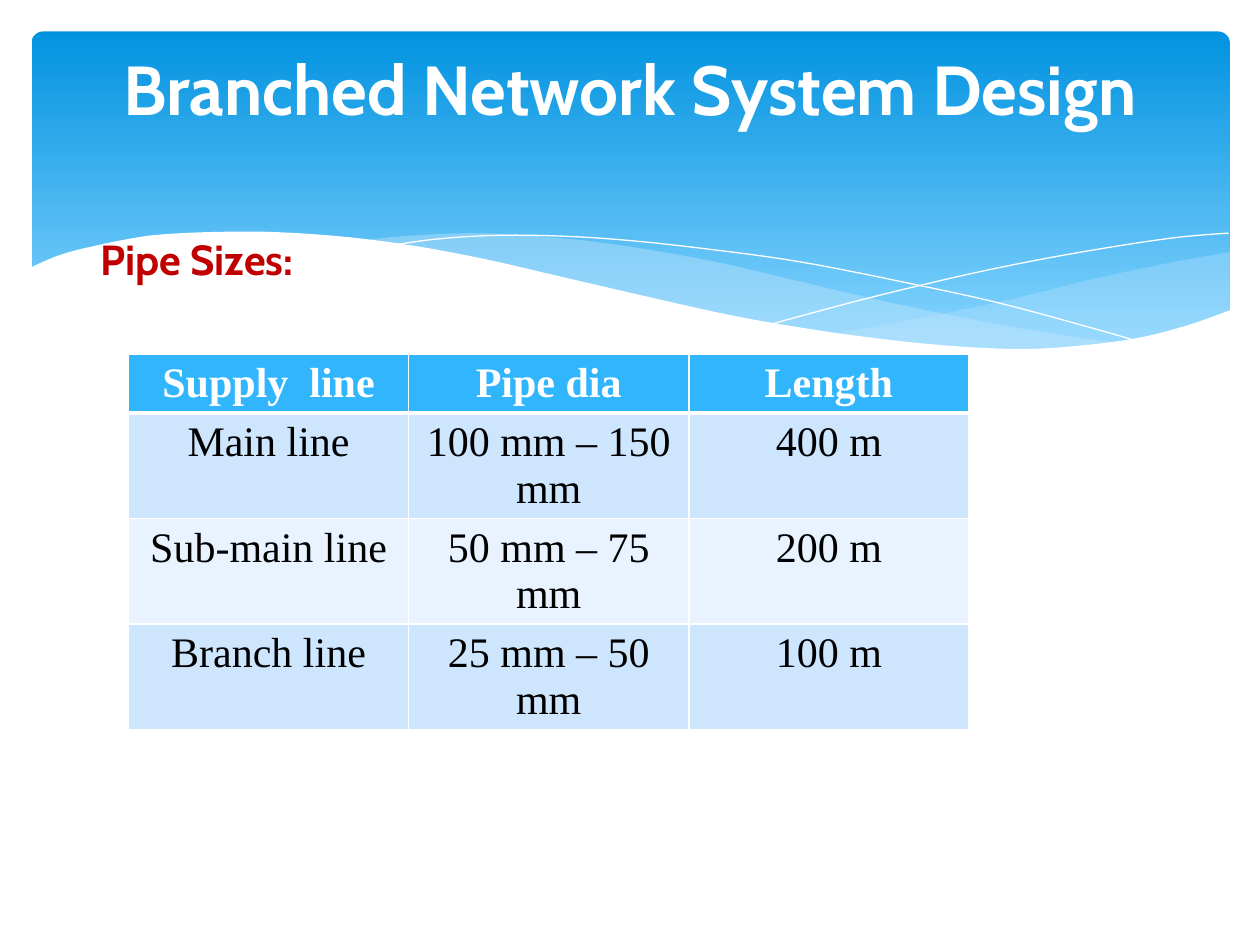
import dataclasses

import pptx
import pptx.dml.color
import pptx.enum.shapes
import pptx.enum.text
import pptx.oxml
import pptx.oxml.ns
import pptx.util
from pptx.util import Inches

rgb = pptx.dml.color.RGBColor.from_string
ALIGN = pptx.enum.text.PP_ALIGN


@dataclasses.dataclass(frozen=True)
class Theme:
    white: str = "FFFFFF"
    black: str = "000000"
    sky_top: str = "0293E0"
    sky_bottom: str = "83D3FE"
    swell: str = "C6E7FC"
    heading: str = "C00000"
    table_head: str = "31B6FD"
    row_tints: tuple = ("CEE5FE", "E8F3FF")
    display_font: str = "Cabin"
    table_font: str = "Times New Roman"
    title_size: float = 39.6
    text_size: float = 24
    thin: float = 1
    thick: float = 3


THEME = Theme()

# Wave outlines in inches from the band's corner: each edge is a smooth curve
RIGHT_SWELL = [
    [(9.51, 1.75), (8.96, 1.85), (8.36, 1.98), (7.8, 2.12), (7.28, 2.23), (6.81, 2.32), (6.36, 2.4)],
    [(6.36, 2.4), (6.94, 2.47), (7.44, 2.52), (7.89, 2.53), (8.29, 2.51), (8.64, 2.47),
     (8.96, 2.4), (9.24, 2.32), (9.51, 2.22)],
]
LEFT_SWELL = [
    [(8.68, 2.48), (8.12, 2.4), (7.5, 2.29), (6.81, 2.15), (6.04, 1.97), (5.44, 1.83), (4.89, 1.73),
     (4.4, 1.66), (3.95, 1.62), (3.55, 1.6), (3.19, 1.61), (2.88, 1.63), (2.61, 1.66)],
    [(2.61, 1.66), (3.17, 1.74), (3.79, 1.86), (4.24, 1.97), (5.05, 2.15), (5.76, 2.3), (6.4, 2.41),
     (6.97, 2.49), (7.48, 2.52), (7.93, 2.53), (8.32, 2.52), (8.68, 2.48)],
]
FALLING_LINE = [
    [(2.84, 1.7), (3.19, 1.65), (3.62, 1.62), (4.08, 1.62), (4.64, 1.65), (5.31, 1.72), (6.11, 1.83),
     (7.02, 2.01), (7.7, 2.16), (8.44, 2.36), (8.82, 2.47)],
]
RISING_LINE = [
    [(5.88, 2.32), (6.47, 2.16), (6.95, 2.04), (7.51, 1.91), (8.11, 1.79), (8.7, 1.69),
     (9.13, 1.63), (9.5, 1.6)],
]
WHITE_WAVE = [
    [(9.52, 2.21), (9.15, 2.34), (8.74, 2.44), (8.25, 2.5), (7.84, 2.52), (7.36, 2.5), (6.83, 2.45),
     (6.23, 2.37), (5.54, 2.25), (4.78, 2.08), (4.22, 1.95), (3.66, 1.82), (3.15, 1.72), (2.67, 1.65),
     (2.25, 1.61), (1.86, 1.59), (1.52, 1.59), (1.21, 1.6), (0.94, 1.62), (0.7, 1.66), (0.51, 1.7),
     (0.34, 1.74), (0.21, 1.78), (0.11, 1.82), (-0.02, 1.88)],
    [(-0.02, 3.04), (9.52, 3.04)],
]
PIPE_SIZES = [
    ["Supply  line", "Pipe dia", "Length"],
    ["Main line", "100 mm – 150 mm", "400 m"],
    ["Sub-main line", "50 mm – 75 mm", "200 m"],
    ["Branch line", "25 mm – 50 mm", "100 m"],
]


def apply(target, **values):
    for name, value in values.items():
        setattr(target, name, value)


def write(frame, text, align, color, name, size, bold):
    frame.text = text
    para = frame.paragraphs[0]
    para.alignment = align
    font = para.runs[0].font
    apply(font, name=name, size=pptx.util.Pt(size), bold=bold)
    font.color.rgb = rgb(color)


def smooth(anchors, steps=6):
    """Points of a Catmull-Rom curve through the anchors."""
    padded = [anchors[0], *anchors, anchors[-1]]
    points = [anchors[0]]
    for a, b, c, d in zip(padded, padded[1:], padded[2:], padded[3:]):
        for step in range(1, steps + 1):
            t = step / steps
            points.append(tuple(
                b[i] + t / 2 * (c[i] - a[i]
                                + t * (2 * a[i] - 5 * b[i] + 4 * c[i] - d[i])
                                + t * t * (3 * b[i] - a[i] - 3 * c[i] + d[i]))
                for i in (0, 1)))
    return points


def add_wave(page, box, edges, color, opacity=100, closed=True):
    left, top = box[:2]
    points = [(left + Inches(x), top + Inches(y)) for edge in edges for x, y in smooth(edge)]
    builder = page.shapes.build_freeform(*points[0])
    builder.add_line_segments(points[1:], close=closed)
    wave = builder.convert_to_shape()
    wave.shadow.inherit = False
    paint = wave.fill if closed else wave.line.fill
    (wave.line.fill if closed else wave.fill).background()
    paint.solid()
    paint.fore_color.rgb = rgb(color)
    if not closed:
        wave.line.width = 0
    if opacity < 100:
        tint = wave.fill._xPr.find(".//" + pptx.oxml.ns.qn("a:srgbClr"))
        alpha = tint.makeelement(pptx.oxml.ns.qn("a:alpha"), {"val": str(opacity * 1000)})
        tint.append(alpha)


def add_header_band(page, box):
    # Sky gradient
    band = page.shapes.add_shape(pptx.enum.shapes.MSO_SHAPE.ROUNDED_RECTANGLE, *box)
    band.adjustments[0] = 0.034
    band.shadow.inherit = False
    band.line.fill.background()
    band.fill.gradient()
    band.fill.gradient_angle = 270
    stops = ((0, THEME.sky_top), (0.9, THEME.sky_bottom))
    for stop, (position, color) in zip(band.fill.gradient_stops, stops):
        stop.position = position
        stop.color.rgb = rgb(color)
    # Waves, from back to front
    add_wave(page, box, RIGHT_SWELL, THEME.swell, opacity=29)
    add_wave(page, box, LEFT_SWELL, THEME.swell, opacity=40)
    for line in (FALLING_LINE, RISING_LINE):
        add_wave(page, box, line, THEME.white, closed=False)
    add_wave(page, box, WHITE_WAVE, THEME.white)


def add_heading(page, box):
    frame = page.shapes.add_textbox(*box).text_frame
    frame.word_wrap = True
    write(frame, "Pipe Sizes:", ALIGN.JUSTIFY, THEME.heading,
          THEME.display_font, THEME.text_size, True)


def place_title(page, box):
    title = page.shapes.title
    left, top, width, height = box
    apply(title, left=left, top=top, width=width, height=height)
    apply(title.text_frame, word_wrap=True, auto_size=pptx.enum.text.MSO_AUTO_SIZE.NONE,
          vertical_anchor=pptx.enum.text.MSO_ANCHOR.MIDDLE)
    write(title.text_frame, "Branched Network System Design", ALIGN.CENTER, THEME.white,
          THEME.display_font, THEME.title_size, True)
    # Bring the title in front of the band
    page.shapes._spTree.append(title._element)


def set_borders(cell, widths):
    properties = cell._tc.get_or_add_tcPr()
    for side, width in widths.items():
        properties.append(pptx.oxml.parse_xml(
            f'<a:ln{side} {pptx.oxml.ns.nsdecls("a")} w="{pptx.util.Pt(width)}"><a:solidFill>'
            f'<a:srgbClr val="{THEME.white}"/></a:solidFill></a:ln{side}>'))


def add_pipe_table(page, box):
    table = page.shapes.add_table(len(PIPE_SIZES), len(PIPE_SIZES[0]), *box).table
    for row, texts in enumerate(PIPE_SIZES):
        head = row == 0
        fill = THEME.table_head if head else THEME.row_tints[(row - 1) % 2]
        for column, text in enumerate(texts):
            cell = table.cell(row, column)
            set_borders(cell, {"L": THEME.thin, "R": THEME.thin,
                               "T": THEME.thick if row == 1 else THEME.thin,
                               "B": THEME.thick if head else THEME.thin})
            cell.fill.solid()
            cell.fill.fore_color.rgb = rgb(fill)
            write(cell.text_frame, text, ALIGN.CENTER, THEME.white if head else THEME.black,
                  THEME.table_font, THEME.text_size, head)


def main():
    deck = pptx.Presentation()
    apply(deck, slide_width=Inches(10), slide_height=Inches(7.5))
    page = deck.slides.add_slide(deck.slide_layouts.get_by_name("Title Only"))
    regions = (
        (add_header_band, (0.25, 0.25, 9.51, 2.7)),
        (add_heading, (0.7, 1.8, 3.52, 0.55)),
        (place_title, (0.5, 0.37, 9, 0.65)),
        (add_pipe_table, (1.02, 2.81, 6.67, 1.62)),
    )
    for build, box in regions:
        build(page, [Inches(length) for length in box])
    deck.save("out.pptx")


if __name__ == "__main__":
    main()
